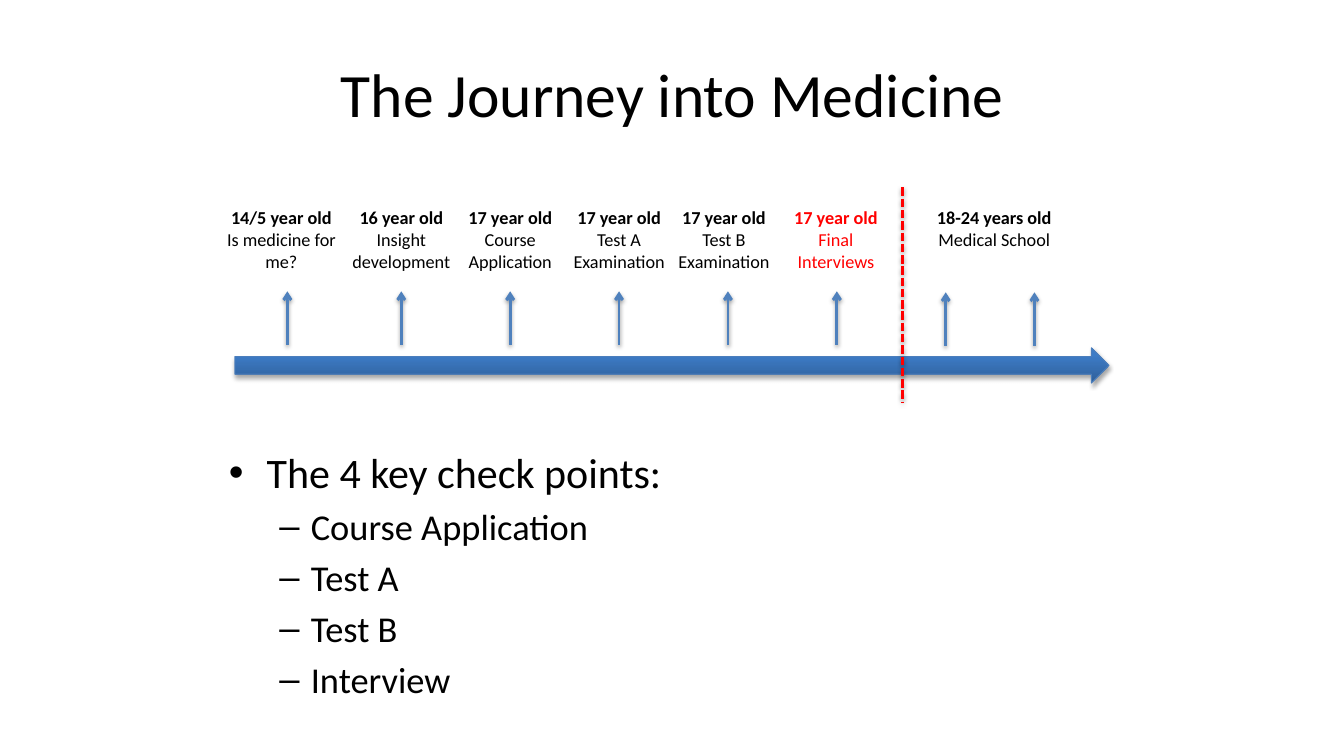
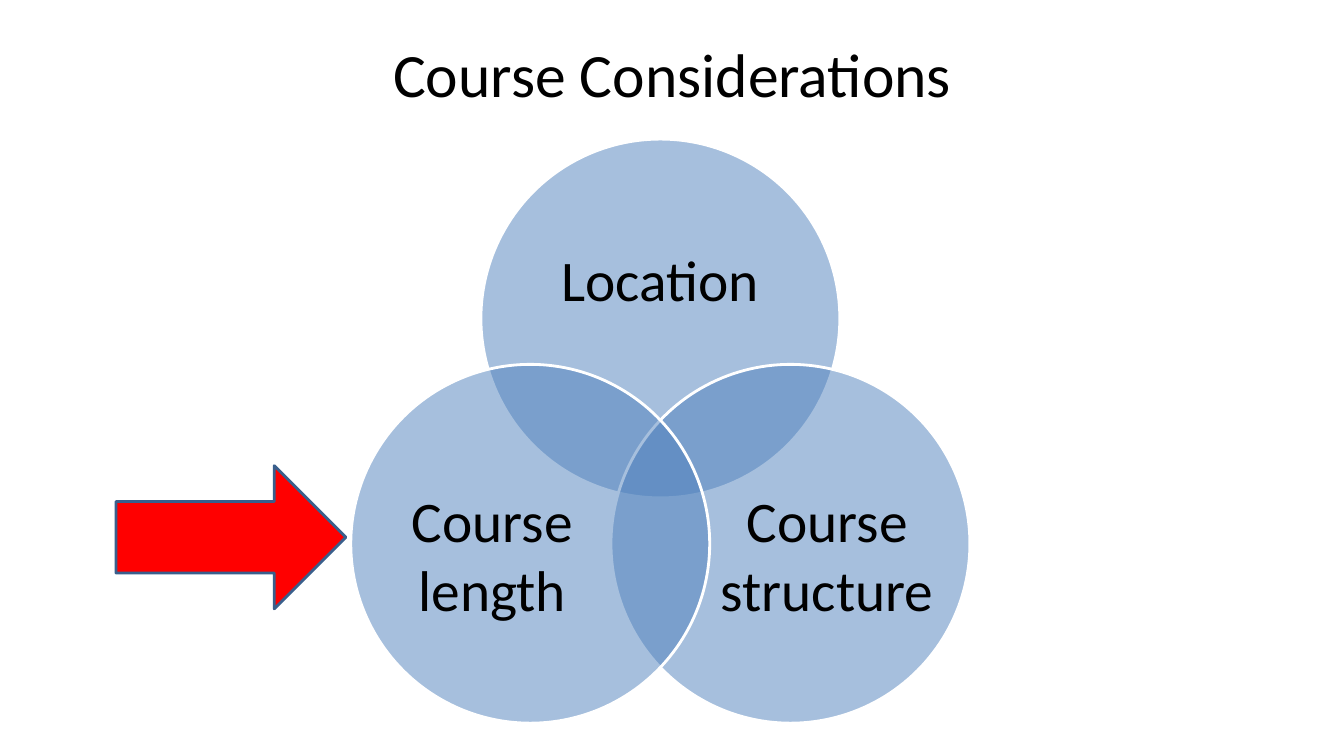
"""Build two slides: a timeline into medicine and a Venn diagram of course choices."""
from dataclasses import dataclass
from math import cos, radians, sin
from typing import Any

from pptx import Presentation
from pptx.dml.color import RGBColor
from pptx.enum.dml import MSO_LINE_DASH_STYLE as Dash
from pptx.enum.shapes import MSO_CONNECTOR as Connector, MSO_SHAPE as Shape
from pptx.enum.text import MSO_ANCHOR as Anchor, MSO_AUTO_SIZE as AutoSize, PP_ALIGN as Align
from pptx.oxml import parse_xml
from pptx.oxml.ns import nsdecls, qn
from pptx.util import Inches, Pt

COLORS = {
    "text": "000000", "accent": "4F81BD", "alert": "FF0000", "white": "FFFFFF",
    "axis_dark": "2F5F99", "axis_light": "3D7CC7", "axis_edge": "4B7EBC", "pointer_edge": "3A5F8C",
}
FONT = "Calibri"
NO_INSETS = dict.fromkeys(("margin_left", "margin_top", "margin_right", "margin_bottom"), 0)


@dataclass(frozen=True)
class Milestone:
    center: float
    width: float
    age: str
    step: str
    color: str = "text"


@dataclass(frozen=True)
class Circle:
    angle: float
    label: str
    area: tuple[float, float, float, float]
    line_spacing: float = 1.0


MILESTONES = (
    Milestone(2.79, 1.61, "14/5 year old", "Is medicine for me?"),
    Milestone(3.98, 1.24, "16 year old", "Insight development"),
    Milestone(5.06, 1.24, "17 year old", "Course Application"),
    Milestone(6.14, 1.24, "17 year old", "Test A Examination"),
    Milestone(7.18, 1.24, "17 year old", "Test B Examination"),
    Milestone(8.29, 1.24, "17 year old", "Final Interviews", "alert"),
    Milestone(9.86, 1.99, "18-24 years old", "Medical School"),
)
SCHOOL_ARROWS = (9.38, 10.26)
STEP_ARROWS = (2.85, *(3.98 + 1.08 * index for index in range(5)))
CHECK_POINTS = ("Course Application", "Test A", "Test B", "Interview")
CIRCLES = (
    Circle(-90, "Location", (5.24, 2.01, 2.61, 1.6), 0.9),
    Circle(30, "Course structure", (7.14, 4.52, 2.13, 1.96)),
    Circle(150, "Course length", (3.82, 4.52, 2.13, 1.96)),
)
VENN_CENTER = (6.55, 4.65)
VENN_RADIUS = 1.49
DIAMETER = 3.56


def rgb(name: str) -> RGBColor:
    return RGBColor.from_string(COLORS[name])


def apply_format(target: Any, values: dict[str, Any]) -> None:
    for name, value in values.items():
        setattr(target, name, value)


def place(shape: Any, left: float, top: float, width: float, height: float) -> None:
    values = {"left": left, "top": top, "width": width, "height": height}
    apply_format(shape, {name: Inches(value) for name, value in values.items()})


def add_span(para: Any, text: str, size: float, color: str = "text", bold: bool = False) -> None:
    span = para.add_run()
    span.text = text
    apply_format(span.font, {"size": Pt(size), "name": FONT, "bold": bold})
    span.font.color.rgb = rgb(color)


def add_slide(deck: Any, layout: int, title: str, height: float) -> Any:
    page = deck.slides.add_slide(deck.slide_layouts[layout])
    place(page.shapes.title, 0.67, 0.3, 12, height)
    frame = page.shapes.title.text_frame
    apply_format(frame, {"auto_size": AutoSize.NONE, "vertical_anchor": Anchor.MIDDLE})
    frame.paragraphs[0].alignment = Align.CENTER
    add_span(frame.paragraphs[0], title, 44)
    return page


def add_text_box(page: Any, area: tuple[float, float, float, float], values: dict[str, Any]) -> Any:
    box = page.shapes.add_textbox(*map(Inches, area))
    apply_format(box.text_frame, {"word_wrap": True, **values})
    box.text_frame.paragraphs[0].alignment = Align.CENTER
    return box.text_frame


def add_shape(page: Any, kind: Any, area: tuple[float, float, float, float],
              edge: str, weight: float) -> Any:
    shape = page.shapes.add_shape(kind, *map(Inches, area))
    shape.line.color.rgb = rgb(edge)
    shape.line.width = Pt(weight)
    shape.shadow.inherit = False
    return shape


def add_shadow(shape: Any, alpha: int, distance: float) -> None:
    properties = shape._element.spPr
    for effects in properties.findall(qn("a:effectLst")):
        properties.remove(effects)
    properties.append(parse_xml(
        f'<a:effectLst {nsdecls("a")}><a:outerShdw blurRad="{Pt(3.1)}" dist="{Pt(distance)}" '
        f'dir="5400000" rotWithShape="0"><a:srgbClr val="{COLORS["text"]}">'
        f'<a:alpha val="{alpha * 1000}"/></a:srgbClr></a:outerShdw></a:effectLst>'))


def add_vertical(page: Any, x: float, start: float, end: float, color: str) -> Any:
    line = page.shapes.add_connector(Connector.STRAIGHT, *map(Inches, (x, start, x, end)))
    line.line.color.rgb = rgb(color)
    line.line.width = Pt(2)
    add_shadow(line, 38, 1.6)
    return line


def add_step_arrow(page: Any, x: float, start: float) -> None:
    arrow = add_vertical(page, x, start, start - 0.53, "accent")
    arrow.line._get_or_add_ln().append(parse_xml(f'<a:tailEnd {nsdecls("a")} type="arrow"/>'))


def add_milestone(page: Any, item: Milestone) -> None:
    area = (item.center - item.width / 2, 2, item.width, 0.76)
    frame = add_text_box(page, area, {})
    add_span(frame.paragraphs[0], item.age, 13, item.color, bold=True)
    para = frame.add_paragraph()
    para.alignment = Align.CENTER
    add_span(para, item.step, 13, item.color)


def add_axis(page: Any) -> None:
    axis = add_shape(page, Shape.RIGHT_ARROW, (2.33, 3.45, 8.67, 0.35), "axis_edge", 0.75)
    axis.fill.gradient()
    axis.fill.gradient_angle = 90
    stops = zip(axis.fill.gradient_stops, ("axis_dark", "axis_light"), (0, 0.8))
    for stop, color, position in stops:
        stop.color.rgb = rgb(color)
        stop.position = position
    add_shadow(axis, 35, 1.8)


def build_journey(deck: Any) -> None:
    page = add_slide(deck, 1, "The Journey into Medicine", 1.25)
    body = page.placeholders[1]
    place(body, 2.17, 4.38, 9, 2.7)
    body.text_frame.auto_size = AutoSize.NONE
    add_span(body.text_frame.paragraphs[0], "The 4 key check points:", 30)
    for point in CHECK_POINTS:
        para = body.text_frame.add_paragraph()
        para.level = 1
        add_span(para, point, 26)
    for x in STEP_ARROWS:
        add_step_arrow(page, x, 3.42)
    add_axis(page)
    for x in SCHOOL_ARROWS:
        add_step_arrow(page, x, 3.43)
    divider = add_vertical(page, 8.95, 1.86, 3.99, "alert")
    divider.line.dash_style = Dash.SQUARE_DOT
    for item in MILESTONES:
        add_milestone(page, item)


def add_circle(page: Any, item: Circle) -> None:
    x, y = VENN_CENTER
    left = x + VENN_RADIUS * cos(radians(item.angle)) - DIAMETER / 2
    top = y + VENN_RADIUS * sin(radians(item.angle)) - DIAMETER / 2
    circle = add_shape(page, Shape.OVAL, (left, top, DIAMETER, DIAMETER), "white", 2)
    circle.fill.solid()
    circle.fill.fore_color.rgb = rgb("accent")
    fill = circle._element.spPr.find(qn("a:solidFill")).find(qn("a:srgbClr"))
    fill.append(parse_xml(f'<a:alpha {nsdecls("a")} val="50000"/>'))
    frame = add_text_box(page, item.area, {"vertical_anchor": Anchor.MIDDLE, **NO_INSETS})
    frame.paragraphs[0].line_spacing = item.line_spacing
    add_span(frame.paragraphs[0], item.label, 41)


def build_considerations(deck: Any) -> None:
    page = add_slide(deck, 5, "Course Considerations", 0.85)
    for item in CIRCLES:
        add_circle(page, item)
    pointer = add_shape(page, Shape.RIGHT_ARROW, (1.15, 4.62, 2.28, 1.42), "pointer_edge", 2)
    pointer.fill.solid()
    pointer.fill.fore_color.rgb = rgb("alert")


def main() -> None:
    deck = Presentation()
    apply_format(deck, {"slide_width": Inches(13.33), "slide_height": Inches(7.5)})
    build_journey(deck)
    build_considerations(deck)
    deck.save("out.pptx")


if __name__ == "__main__":
    main()
